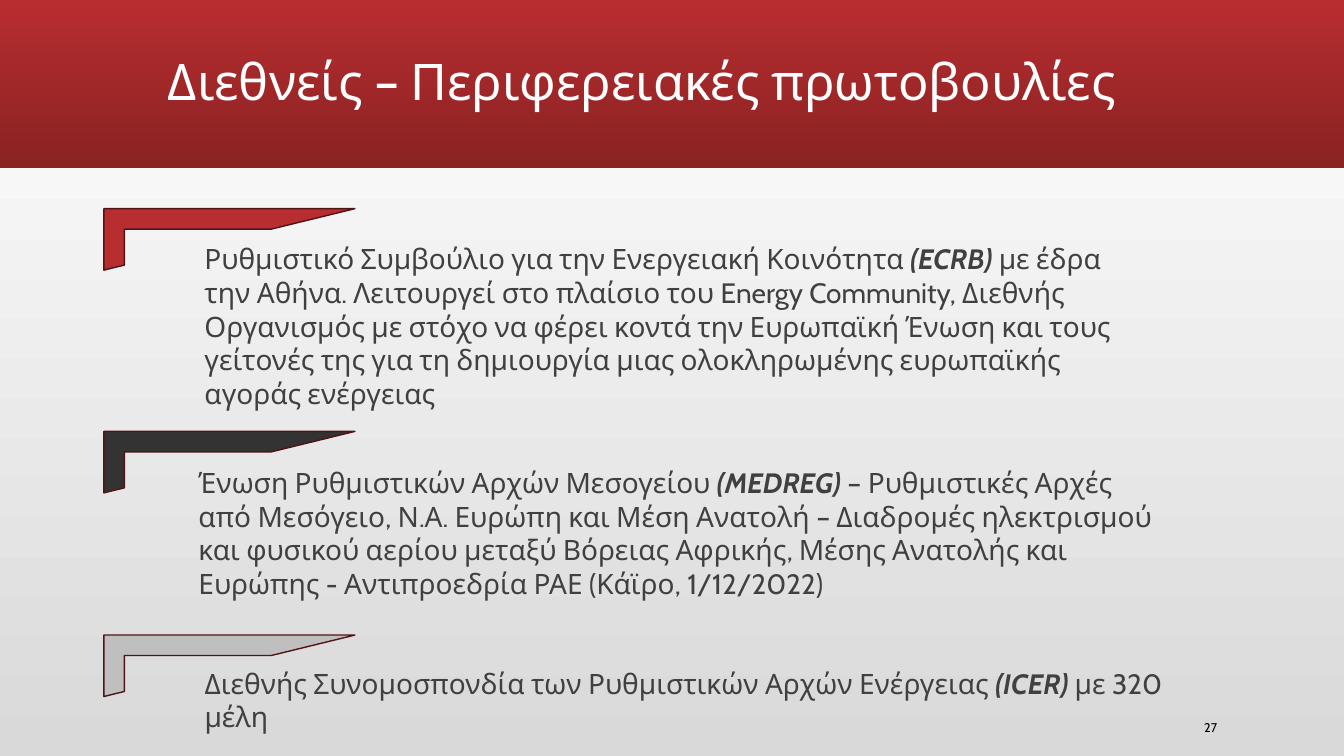
from dataclasses import dataclass

from pptx import Presentation
from pptx.dml.color import RGBColor
from pptx.enum.shapes import MSO_SHAPE
from pptx.enum.text import MSO_ANCHOR, PP_ALIGN
from pptx.util import Pt

PX = 9144


@dataclass(frozen=True)
class Theme:
    font: str = "Cabin"
    title_size: int = 36
    body_size: int = 20
    number_size: int = 9
    white: str = "FFFFFF"
    black: str = "000000"
    body: str = "404040"
    red: str = "B82D2F"
    dark_red: str = "8A2223"
    outline: str = "511415"
    charcoal: str = "333333"
    silver: str = "BFBFBF"
    backdrop: str = "D9D9D9"


theme = Theme()


def set_gradient(fill, colors, angle):
    fill.gradient()
    fill.gradient_angle = angle
    for stop, color in zip(fill.gradient_stops, colors):
        stop.color.rgb = RGBColor.from_string(color)


def add_text(text, *, box, size, color, emphasis="", rest="", align=PP_ALIGN.LEFT,
             anchor=MSO_ANCHOR.TOP, line_spacing=None, space_after=0):
    shape = slide.shapes.add_textbox(*(length * PX for length in box))
    frame = shape.text_frame
    frame.word_wrap = True
    frame.vertical_anchor = anchor
    paragraph = frame.paragraphs[0]
    paragraph.alignment = align
    paragraph.line_spacing = line_spacing
    paragraph.space_after = Pt(space_after)
    for part, strong in ((text, False), (emphasis, True), (rest, False)):
        if part:
            run = paragraph.add_run()
            run.text = part
            run.font.name = theme.font
            run.font.size = Pt(size)
            run.font.bold = run.font.italic = strong
            run.font.color.rgb = RGBColor.from_string(color)


presentation = Presentation()
presentation.slide_width = 1333 * PX
presentation.slide_height = 750 * PX
slide = presentation.slides.add_slide(presentation.slide_layouts[6])
set_gradient(slide.background.fill, (theme.backdrop, theme.white), 90)

banner = slide.shapes.add_shape(MSO_SHAPE.RECTANGLE, 0, 0, presentation.slide_width, 167 * PX)
banner.shadow.inherit = False
banner.line.fill.background()
set_gradient(banner.fill, (theme.red, theme.dark_red), 270)

add_text("27", box=(1125, 709, 92, 26), size=theme.number_size, color=theme.black,
         align=PP_ALIGN.RIGHT, anchor=MSO_ANCHOR.MIDDLE)
add_text("Διεθνείς – Περιφερειακές πρωτοβουλίες", box=(58, 11, 1158, 145),
         size=theme.title_size, color=theme.white, align=PP_ALIGN.CENTER,
         anchor=MSO_ANCHOR.MIDDLE, line_spacing=0.9)

initiatives = [
    (207, theme.red, (193, 235, 960, 145),
     "Ρυθμιστικό Συμβούλιο για την Ενεργειακή Κοινότητα ", "(ECRB) ",
     "με έδρα την Αθήνα. Λειτουργεί στο πλαίσιο του Energy Community, Διεθνής "
     "Οργανισμός με στόχο να φέρει κοντά την Ευρωπαϊκή Ένωση και τους γείτονές της "
     "για τη δημιουργία μιας ολοκληρωμένης ευρωπαϊκής αγοράς ενέργειας"),
    (428, theme.charcoal, (187, 457, 972, 145),
     "Ένωση Ρυθμιστικών Αρχών Μεσογείου ", "(MEDREG) ",
     "– Ρυθμιστικές Αρχές από Μεσόγειο, Ν.Α. Ευρώπη και Μέση Ανατολή – Διαδρομές "
     "ηλεκτρισμού και φυσικού αερίου μεταξύ Βόρειας Αφρικής, Μέσης Ανατολής και "
     "Ευρώπης - Αντιπροεδρία ΡΑΕ (Κάϊρο, 1/12/2022)"),
    (630, theme.silver, (193, 656, 972, 44),
     "Διεθνής Συνομοσπονδία των Ρυθμιστικών Αρχών Ενέργειας ", "(ICER) ",
     "με 320 μέλη"),
]

for top, color, box, name, acronym, description in initiatives:
    add_text(name, emphasis=acronym, rest=description, box=box,
             size=theme.body_size, color=theme.body, space_after=5)
    corner = slide.shapes.add_shape(MSO_SHAPE.HALF_FRAME, 103 * PX, top * PX, 249 * PX, 61 * PX)
    corner.shadow.inherit = False
    corner.fill.solid()
    corner.fill.fore_color.rgb = RGBColor.from_string(color)
    corner.line.color.rgb = RGBColor.from_string(theme.outline)
    corner.line.width = Pt(1)

presentation.save("out.pptx")
